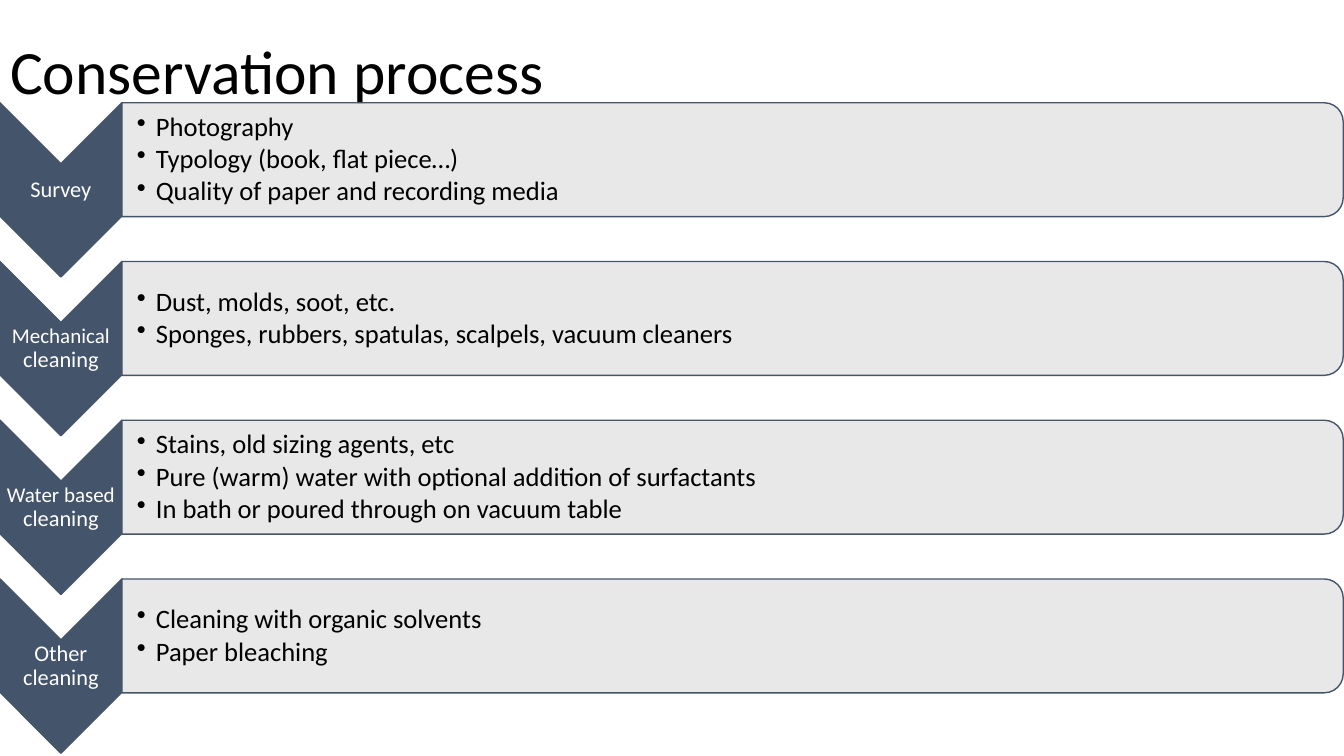
from lxml import etree
from pptx import Presentation
from pptx.dml.color import RGBColor
from pptx.enum import shapes, text
from pptx.oxml.ns import qn
from pptx.util import Cm, Pt

TITLE = "Conservation process"
# Each stage: label runs with their sizes, then the bullet points
STAGES = [
    ([("Survey", 16)],
     ["Photography", "Typology (book, flat piece…)",
      "Quality of paper and recording media"]),
    ([("Mechanical ", 15), ("cleaning", 16)],
     ["Dust, molds, soot, etc.",
      "Sponges, rubbers, spatulas, scalpels, vacuum cleaners"]),
    ([("Water based ", 15), ("cleaning", 16)],
     ["Stains, old sizing agents, etc",
      "Pure (warm) water with optional addition of surfactants",
      "In bath or poured through on vacuum table"]),
    ([("Other cleaning", 16)],
     ["Cleaning with organic solvents", "Paper bleaching"]),
]
COLORS = {"stage": "44546A", "panel": "E7E6E6", "label": "FFFFFF", "ink": "000000"}
FONT = "Calibri"

# Layout in centimetres
STAGE_TOP, STAGE_PITCH = 2.59, 4.0
CHEVRON_W, CHEVRON_H = 3.07, 4.39
PANEL_W, PANEL_H = 30.78, 2.87
LABEL_DROP, LABEL_H = 1.55, 1.32
POINTS_DROP, POINTS_W, POINTS_H = 0.15, 30.65, 2.59
INDENT = 0.48

deck = Presentation()
deck.slide_width, deck.slide_height = Cm(33.87), Cm(19.05)
slide = deck.slides.add_slide(deck.slide_layouts[5])


def color(name):
    return RGBColor.from_string(COLORS[name])


def add_run(paragraph, wording, size, ink):
    run = paragraph.add_run()
    run.text = wording
    run.font.name, run.font.size = FONT, Pt(size)
    run.font.color.rgb = color(ink)


def add_upright(kind, left, top, width, height, fill):
    """Add a shape turned by 90° that covers the given box on the slide."""
    shift = (width - height) / 2
    shape = slide.shapes.add_shape(
        kind, Cm(left + shift), Cm(top - shift), Cm(height), Cm(width))
    shape.rotation = 90
    shape.shadow.inherit = False
    shape.fill.solid()
    shape.fill.fore_color.rgb = color(fill)
    shape.line.color.rgb = color("stage")
    shape.line.width = Pt(1)
    return shape


def add_frame(left, top, width, height, inset_left):
    frame = slide.shapes.add_textbox(
        Cm(left), Cm(top), Cm(width), Cm(height)).text_frame
    frame.word_wrap = True
    frame.vertical_anchor = text.MSO_ANCHOR.MIDDLE
    frame.margin_left = Cm(inset_left)
    frame.margin_right = frame.margin_top = frame.margin_bottom = Cm(0.03)
    return frame


# Title
heading = slide.shapes.title
heading.left, heading.top = Cm(0), Cm(0.05)
heading.width, heading.height = Cm(29.21), Cm(3.68)
heading.text_frame.vertical_anchor = text.MSO_ANCHOR.MIDDLE
heading_line = heading.text_frame.paragraphs[0]
heading_line.alignment = text.PP_ALIGN.LEFT
heading_line.line_spacing = 0.9
add_run(heading_line, TITLE, 44, "ink")

# Stages
for row, (label_runs, points) in enumerate(STAGES):
    top = STAGE_TOP + row * STAGE_PITCH

    # Chevron and its label
    add_upright(shapes.MSO_SHAPE.CHEVRON, 0, top, CHEVRON_W, CHEVRON_H, "stage")
    label = add_frame(0, top + LABEL_DROP, CHEVRON_W, LABEL_H, 0.03).paragraphs[0]
    label.alignment = text.PP_ALIGN.CENTER
    label.line_spacing = 0.9
    for wording, size in label_runs:
        add_run(label, wording, size, "label")

    # Panel, slightly see-through
    panel = add_upright(shapes.MSO_SHAPE.ROUND_2_SAME_RECTANGLE,
                        CHEVRON_W, top, PANEL_W, PANEL_H, "panel")
    panel_color = panel.fill._xPr.find(qn("a:solidFill"))[0]
    etree.SubElement(panel_color, qn("a:alpha"), val="90000")

    # Bullet points
    frame = add_frame(CHEVRON_W, top + POINTS_DROP, POINTS_W, POINTS_H, 0.38)
    for number, point in enumerate(points):
        bullet = frame.add_paragraph() if number else frame.paragraphs[0]
        bullet.level = 1
        bullet.line_spacing = 0.9
        bullet.space_after = Pt(2.5)
        props = bullet._p.get_or_add_pPr()
        props.set("marL", str(Cm(INDENT)))
        props.set("indent", str(-Cm(INDENT)))
        etree.SubElement(props, qn("a:buChar"), char="•")
        add_run(bullet, point, 19, "ink")

deck.save("out.pptx")
